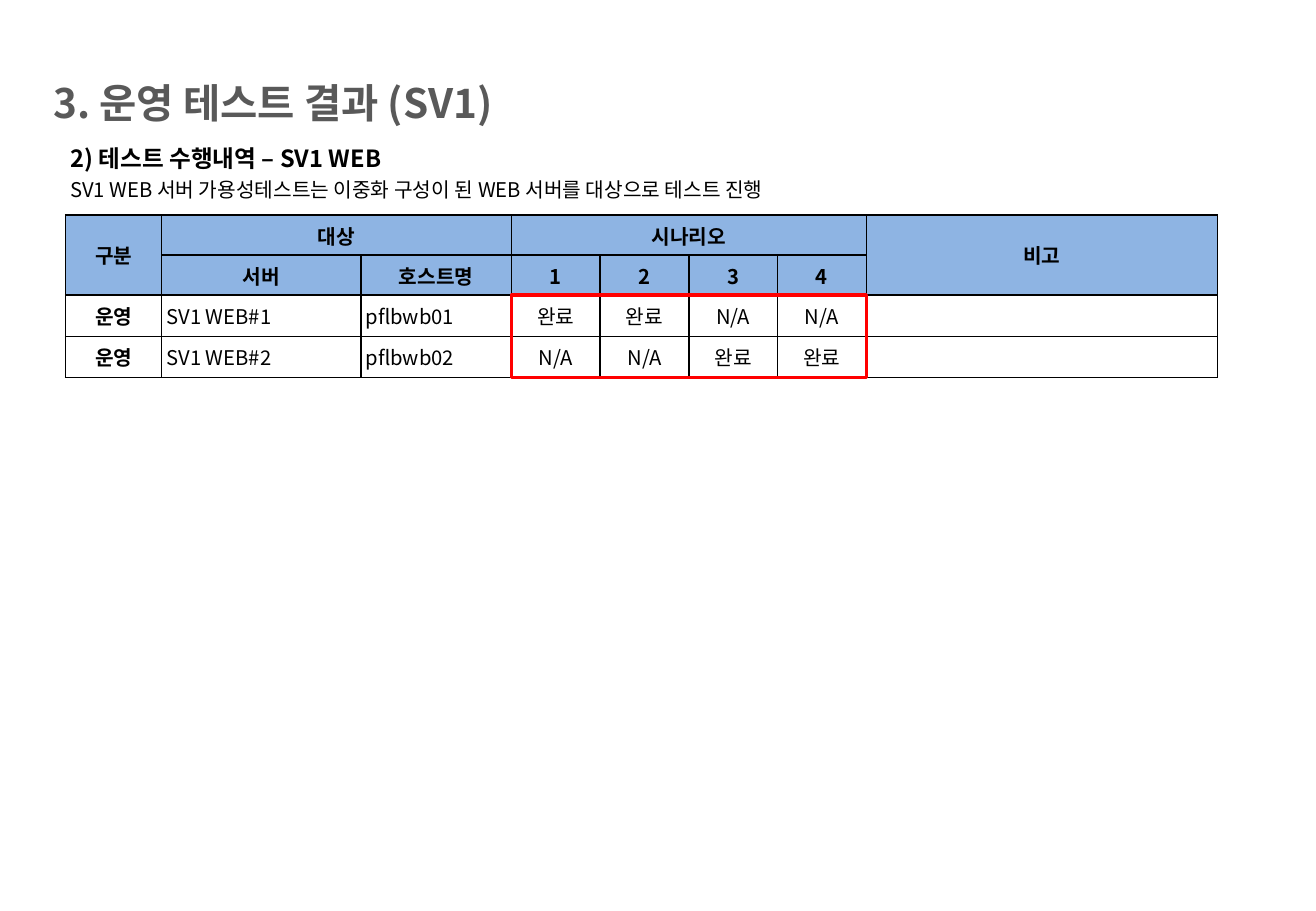
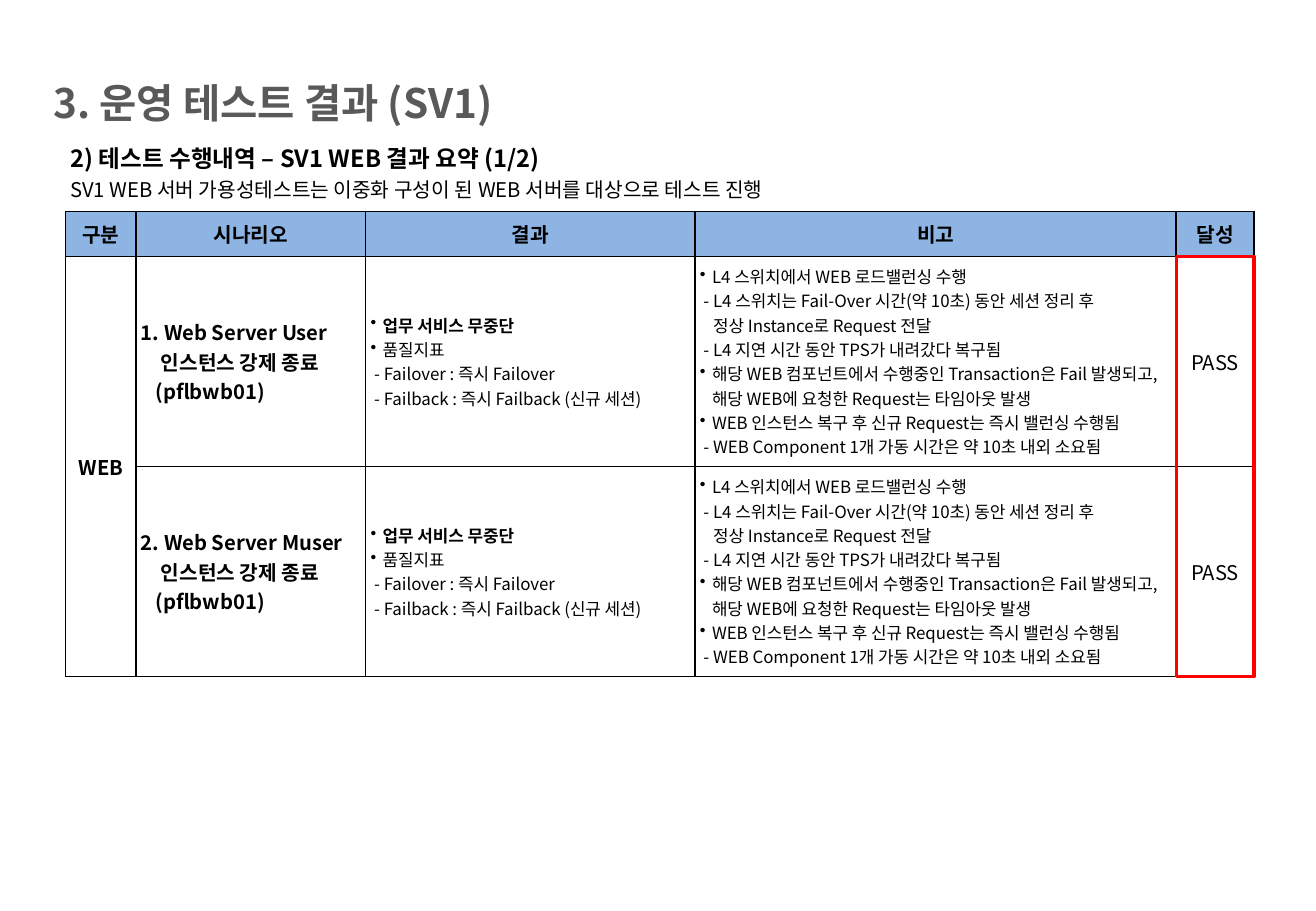
"""Build two slides that report the SV1 WEB availability test."""
from copy import deepcopy
from dataclasses import dataclass, field

from lxml import etree
from pptx import Presentation
from pptx.dml.color import RGBColor
from pptx.enum.shapes import MSO_SHAPE
from pptx.enum.text import MSO_ANCHOR, PP_ALIGN
from pptx.oxml.ns import qn
from pptx.util import Inches, Pt

RECT = MSO_SHAPE.RECTANGLE
TOP, MID = MSO_ANCHOR.TOP, MSO_ANCHOR.MIDDLE
LEFT, CENTER = PP_ALIGN.LEFT, PP_ALIGN.CENTER
UNIT = Inches(0.1)


@dataclass
class Style:
    size: int
    bold: bool = False
    para: dict = field(default_factory=dict)
    left: float = 0
    hang: float = 0
    mark: str = ""
    ink: str = "000000"


class Theme:
    font = "Noto Sans CJK KR"
    edge, head, body, frame = "000000", "8EB4E3", "FFFFFF", "FF0000"
    thin, thick = Pt(1), Pt(2)
    pad = {"head": (1, 0.5), "body": (0.4, 0.4)}
    styles = {
        "title": Style(24, True, ink="595959"),
        "sub": Style(14, True, {"line_spacing": 1.2}),
        "lead": Style(12, False, {"line_spacing": 1.2}),
        "key": Style(12, True, {"alignment": CENTER}),
        "mid": Style(12, False, {"alignment": CENTER}),
        "left": Style(12, False, {"alignment": LEFT}),
        "case": Style(12, True, left=1.65, hang=1.65),
        "host": Style(12, True, left=1.2),
        "main": Style(10, True, left=1, hang=1, mark="•"),
        "point": Style(10, left=1, hang=1, mark="•"),
        "dash": Style(10, left=1.1, hang=0.8),
    }


def write(frame, lines):
    for i, (name, text) in enumerate(lines):
        style = Theme.styles[name]
        para = frame.paragraphs[0] if i == 0 else frame.add_paragraph()
        para.text = text
        props = para._p.get_or_add_pPr()
        props.set("marL", str(int(style.left * UNIT)))
        props.set("indent", str(int(-style.hang * UNIT)))
        if style.mark:
            etree.SubElement(props, qn("a:buChar"), char=style.mark)
        for key, val in style.para.items():
            setattr(para, key, val)
        look = {"name": Theme.font, "size": Pt(style.size), "bold": style.bold}
        for run in para.runs:
            for key, val in look.items():
                setattr(run.font, key, val)
            run.font.color.rgb = RGBColor.from_string(style.ink)
            etree.SubElement(run._r.rPr, qn("a:ea"), typeface=Theme.font)
        for gap in para._p.findall(qn("a:br")):
            gap.append(deepcopy(para.runs[0]._r.rPr))
        if not text:
            etree.SubElement(para._p, qn("a:endParaRPr"), sz=str(style.size * 100))


def grid(slide, top, cols, rows, cells, heads, spans, mark):
    x, y = 5.4 * UNIT, top * UNIT
    shape = slide.shapes.add_table(len(rows), len(cols), int(x), int(y),
                                   int(sum(cols) * UNIT), int(sum(rows) * UNIT))
    table = shape.table
    table.first_row = table.horz_banding = False
    for part, sizes, key in ((table.columns, cols, "width"), (table.rows, rows, "height")):
        for item, size in zip(part, sizes):
            setattr(item, key, int(size * UNIT))
    for r, row in enumerate(cells):
        for c, lines in enumerate(row):
            cell, kind = table.cell(r, c), "head" if r < heads else "body"
            props = cell._tc.get_or_add_tcPr()
            for side in "LRTB":
                line = etree.SubElement(props, qn(f"a:ln{side}"), w=str(Theme.thin))
                fill = etree.SubElement(line, qn("a:solidFill"))
                etree.SubElement(fill, qn("a:srgbClr"), val=Theme.edge)
            cell.fill.solid()
            cell.fill.fore_color.rgb = RGBColor.from_string(getattr(Theme, kind))
            wide, tall = (int(p * UNIT) for p in Theme.pad[kind])
            look = {"vertical_anchor": MID, "margin_left": wide, "margin_right": wide,
                    "margin_top": tall, "margin_bottom": tall}
            for key, val in look.items():
                setattr(cell, key, val)
            write(cell.text_frame, lines)
    for r1, c1, r2, c2 in spans:
        table.cell(r1, c1).merge(table.cell(r2, c2))
    c1, c2 = mark
    box = slide.shapes.add_shape(RECT, int(x + sum(cols[:c1]) * UNIT),
                                 int(y + sum(rows[:heads]) * UNIT),
                                 int(sum(cols[c1:c2]) * UNIT), int(sum(rows[heads:]) * UNIT))
    box.shadow.inherit = False
    box.fill.background()
    box.line.color.rgb = RGBColor.from_string(Theme.frame)
    box.line.width = Theme.thick


deck = Presentation()
deck.slide_width, deck.slide_height = Inches(10.83), Inches(7.5)

lead = "SV1 WEB 서버 가용성테스트는 이중화 구성이 된 WEB 서버를 대상으로 테스트 진행"
pages = []
for sub in ("SV1 WEB", "SV1 WEB 결과 요약 (1/2)"):
    slide = deck.slides.add_slide(deck.slide_layouts[6])
    pages.append(slide)
    for area, anchor, lines in (
        ((3.4, 5.5, 80.6, 5.8), MID, [("title", "3. 운영 테스트 결과 (SV1)")]),
        ((4.8, 10.9, 102.4, 6.3), TOP, [("sub", f"2) 테스트 수행내역 – {sub}"), ("lead", lead)]),
    ):
        frame = slide.shapes.add_textbox(*(int(v * UNIT) for v in area)).text_frame
        frame.word_wrap = True
        frame.vertical_anchor = anchor
        write(frame, lines)

heads = [["구분", "대상", "", "시나리오", "", "", "", "비고"],
         ["", "서버", "호스트명", "1", "2", "3", "4", ""]]
hosts = [["운영", "SV1 WEB#1", "pflbwb01", "완료", "완료", "N/A", "N/A", ""],
         ["운영", "SV1 WEB#2", "pflbwb02", "N/A", "N/A", "완료", "완료", ""]]
kinds = ["key", "left", "left"] + ["mid"] * 5
cells = [[[("key", text)] for text in row] for row in heads]
cells += [[[pair] for pair in zip(kinds, row)] for row in hosts]
grid(pages[0], 17.7, [7.9, 16.4, 12.4] + [7.3] * 4 + [28.9], [3.3, 3.3, 3.4, 3.4], cells, 2,
     [(0, 0, 1, 0), (0, 1, 0, 2), (0, 3, 0, 6), (0, 7, 1, 7)], (3, 7))

result = [
    ("main", "업무 서비스 무중단"),
    ("point", "품질지표"),
    ("dash", "- Failover : 즉시 Failover"),
    ("dash", "- Failback : 즉시 Failback (신규 세션)"),
]
notes = [
    ("point", "L4 스위치에서 WEB 로드밸런싱 수행"),
    ("dash", "- L4 스위치는 Fail-Over 시간(약 10초) 동안 세션 정리 후\v정상 Instance로 Request 전달"),
    ("dash", "- L4 지연 시간 동안 TPS가 내려갔다 복구됨"),
    ("point", "해당 WEB 컴포넌트에서 수행중인 Transaction은 Fail 발생되고, "
              "해당 WEB에 요청한 Request는 타임아웃 발생"),
    ("point", "WEB 인스턴스 복구 후 신규 Request는 즉시 밸런싱 수행됨"),
    ("dash", "- WEB Component 1개 가동 시간은 약 10초 내외 소요됨"),
]
cells = [[[("key", text)] for text in ("구분", "시나리오", "결과", "비고", "달성")]]
for group, case in (("WEB", "1. Web Server User"), ("", "2. Web Server Muser")):
    cells.append([[("key", group)],
                  [("case", f"{case}\v인스턴스 강제 종료"), ("host", "(pflbwb01)")],
                  result, notes, [("mid", "PASS")]])
grid(pages[1], 17.4, [5.8, 18.9, 27.1, 39.6, 6.4], [3.7, 17.3, 17.3], cells, 1,
     [(1, 0, 2, 0)], (4, 5))

deck.save("out.pptx")
